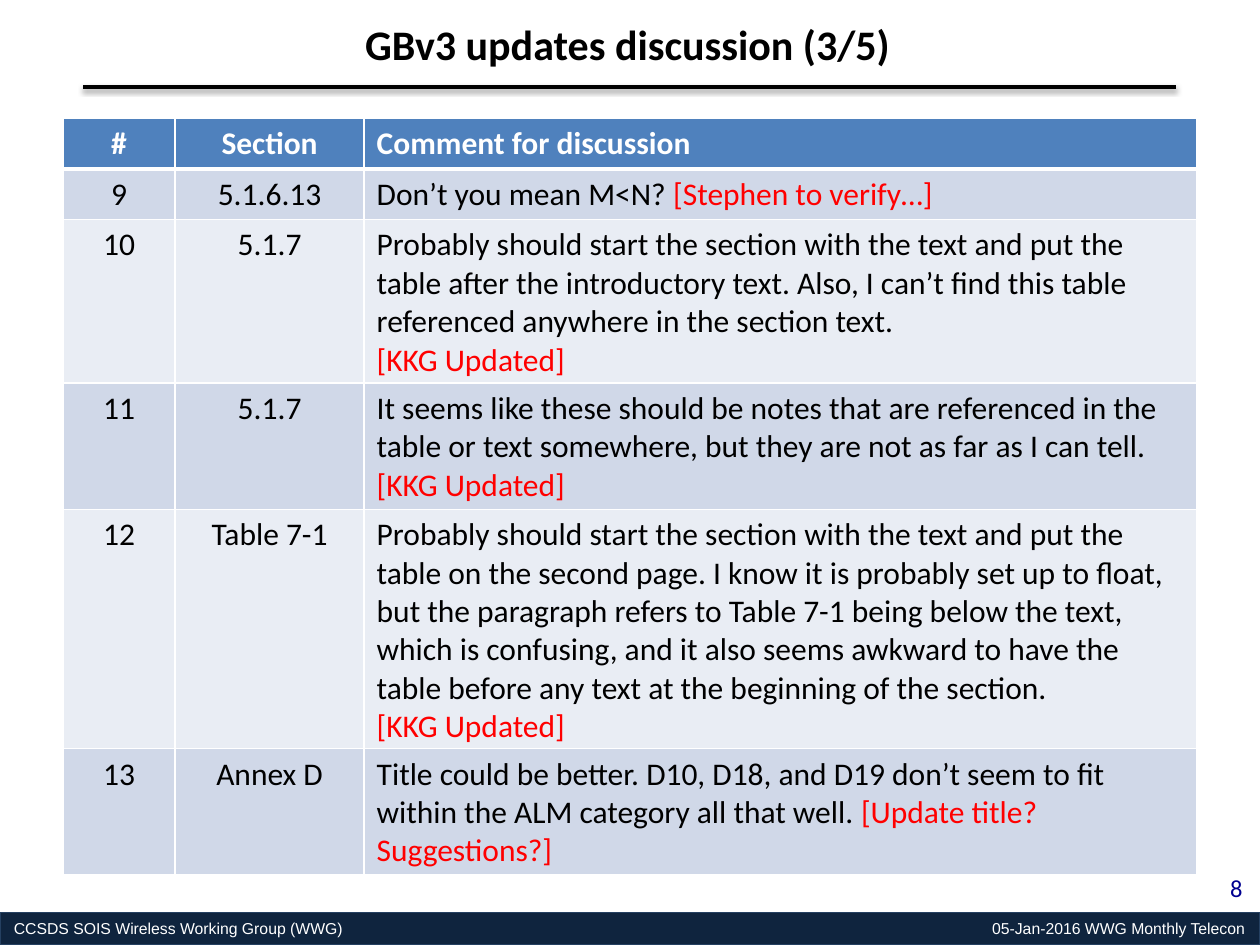
from dataclasses import dataclass
from pptx import Presentation
from pptx.dml.color import RGBColor as RGB
from pptx.enum.shapes import MSO_CONNECTOR as Conn, MSO_SHAPE as Kind
from pptx.enum.text import MSO_ANCHOR as Anchor, PP_ALIGN as Align
from pptx.oxml import parse_xml
from pptx.oxml.ns import nsdecls
from pptx.util import Inches, Pt


@dataclass(frozen=True)
class Theme:
    body: str = "Calibri"
    foot: str = "Arial"
    black: str = "000000"
    white: str = "FFFFFF"
    red: str = "FF0000"
    navy: str = "000090"
    bar: str = "0F243E"
    edge: str = "254061"
    head: str = "4F81BD"
    bands: tuple = ("D0D8E8", "E9EDF4")
    title: int = 24
    cell: int = 18
    page: int = 14
    small: int = 9


class Deck:
    def __init__(self, theme):
        self.theme = theme
        self.prs = Presentation()
        self.prs.slide_width, self.prs.slide_height = Inches(10), Inches(7.5)
        self.slide = self.prs.slides.add_slide(self.prs.slide_layouts[6])
        self.shapes = self.slide.shapes

    def style(self, run, size, color, bold=False, face=None):
        font = run.font
        font.name, font.size, font.bold = face or self.theme.body, Pt(size), bold
        font.color.rgb = RGB.from_string(color)

    def text(self, words, box, size, color, align=Align.LEFT, bold=False, wrap=True):
        frame = self.shapes.add_textbox(*map(Inches, box)).text_frame
        frame.word_wrap = wrap
        frame.text = words
        para = frame.paragraphs[0]
        para.alignment = align
        self.style(para.runs[0], size, color, bold)

    def bar(self, left, right, box):
        shape = self.shapes.add_shape(Kind.RECTANGLE, *map(Inches, box))
        shape.shadow.inherit = False
        shape.fill.solid()
        shape.fill.fore_color.rgb = RGB.from_string(self.theme.bar)
        shape.line.color.rgb = RGB.from_string(self.theme.edge)
        shape.line.width = Pt(0.75)
        frame = shape.text_frame
        frame.margin_left = frame.margin_right = Inches(0.11)
        frame.margin_top = frame.margin_bottom = Inches(0.06)
        frame.vertical_anchor = Anchor.MIDDLE
        frame.text = f"{left}\t{right}"
        para = frame.paragraphs[0]
        para.alignment = Align.LEFT
        stop = Inches(box[2] - 0.23)
        para._p.get_or_add_pPr().append(parse_xml(
            f'<a:tabLst {nsdecls("a")}><a:tab pos="{stop}" algn="r"/></a:tabLst>'))
        self.style(para.runs[0], self.theme.small, self.theme.white, face=self.theme.foot)

    def rule(self, start, end):
        line = self.shapes.add_connector(Conn.STRAIGHT, *map(Inches, start + end))
        line.line.color.rgb = RGB.from_string(self.theme.black)
        line.line.width = Pt(2)
        line._element.spPr.append(parse_xml(
            f'<a:effectLst {nsdecls("a")}><a:outerShdw blurRad="{Pt(3.1)}" '
            f'dist="{Pt(1.6)}" dir="5400000" rotWithShape="0">'
            f'<a:srgbClr val="{self.theme.black}"><a:alpha val="38000"/></a:srgbClr>'
            '</a:outerShdw></a:effectLst>'))

    def border(self, cell, row):
        heavy = {0: "B", 1: "T"}.get(row)
        props = cell._tc.get_or_add_tcPr()
        for side in "LRTB":
            width = Pt(3 if side == heavy else 1)
            props.append(parse_xml(
                f'<a:ln{side} {nsdecls("a")} w="{width}"><a:solidFill>'
                f'<a:srgbClr val="{self.theme.white}"/></a:solidFill></a:ln{side}>'))

    def fill(self, cell, row, col, words, note="", split=False):
        look = self.theme
        self.border(cell, row)
        cell.fill.solid()
        shade = look.bands[(row - 1) % 2] if row else look.head
        cell.fill.fore_color.rgb = RGB.from_string(shade)
        frame = cell.text_frame
        frame.text = words
        para = frame.paragraphs[0]
        para.alignment = Align.LEFT if col == 2 else Align.CENTER
        self.style(para.runs[0], look.cell, look.black if row else look.white, not row)
        if note:
            run = (frame.add_paragraph() if split else para).add_run()
            run.text = note
            self.style(run, look.cell, look.red)

    def table(self, rows, spot, wide, high):
        size = (sum(wide), sum(high))
        grid = self.shapes.add_table(
            len(rows), len(wide), *map(Inches, spot + size)).table
        for col, width in zip(grid.columns, wide):
            col.width = Inches(width)
        for r, (num, part, note) in enumerate(rows):
            grid.rows[r].height = Inches(high[r])
            for c, args in enumerate(((num,), (part,), note)):
                self.fill(grid.cell(r, c), r, c, *args)


DONE = "[KKG Updated]"
ROWS = [
    ("#", "Section", ("Comment for discussion",)),
    ("9", "5.1.6.13", ("Don’t you mean M<N? ", "[Stephen to verify…]")),
    ("10", "5.1.7", (
        "Probably should start the section with the text and put the table after "
        "the introductory text. Also, I can’t find this table referenced anywhere "
        "in the section text.", DONE, True)),
    ("11", "5.1.7", (
        "It seems like these should be notes that are referenced in the table or "
        "text somewhere, but they are not as far as I can tell.", DONE, True)),
    ("12", "Table 7-1", (
        "Probably should start the section with the text and put the table on the "
        "second page. I know it is probably set up to float, but the paragraph "
        "refers to Table 7-1 being below the text, which is confusing, and it also "
        "seems awkward to have the table before any text at the beginning of the "
        "section.", DONE, True)),
    ("13", "Annex D", (
        "Title could be better. D10, D18, and D19 don’t seem to fit within the ALM "
        "category all that well. ", "[Update title? Suggestions?]")),
]


def main():
    look = Theme()
    deck = Deck(look)
    deck.bar("CCSDS SOIS Wireless Working Group (WWG)",
             "05-Jan-2016 WWG Monthly Telecon", (0, 7.24, 10, 0.26))
    deck.text("8", (9.3, 6.88, 0.66, 0.35), look.page, look.navy, Align.RIGHT)
    deck.table(ROWS, (0.5, 0.94), (0.89, 1.5, 6.61), (0.4, 0.4, 1.3, 1, 1.9, 1))
    deck.text("GBv3 updates discussion (3/5)", (2.8, 0.1, 4.42, 0.5),
              look.title, look.black, bold=True, wrap=False)
    deck.rule((0.66, 0.69), (9.33, 0.69))
    deck.prs.save("out.pptx")


if __name__ == "__main__":
    main()
